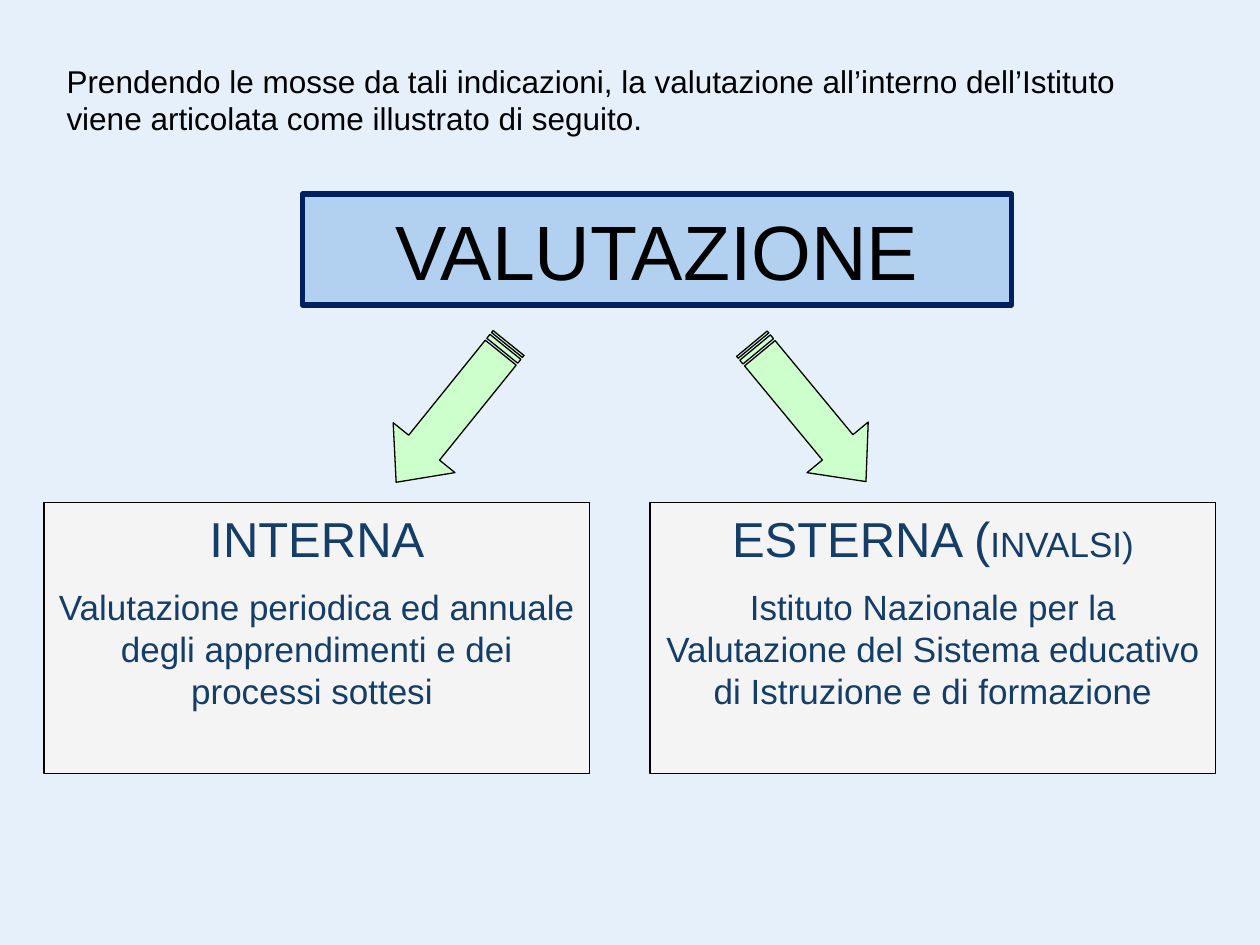
from dataclasses import dataclass

import pptx
import pptx.util
from pptx.dml.color import RGBColor
from pptx.enum.shapes import MSO_SHAPE
from pptx.enum.text import MSO_ANCHOR, PP_ALIGN

Inches, Pt = pptx.util.Inches, pptx.util.Pt


@dataclass(frozen=True)
class Theme:
    font: str = "Arial"
    background: str = "E5F0FA"
    black: str = "000000"
    text: str = "143D67"
    panel: str = "F4F4F4"
    banner: str = "B2D1F1"
    banner_line: str = "002060"
    arrow: str = "CCFFCC"
    banner_size: int = 44
    heading_size: int = 28
    body_size: int = 20
    intro_size: int = 18
    thin: float = 0.75
    thick: float = 3


THEME = Theme()


def add_box(slide, kind, box, fill, line, width):
    sp = slide.shapes.add_shape(kind, *map(Inches, box))
    sp.shadow.inherit = False
    sp.fill.solid()
    sp.fill.fore_color.rgb = RGBColor.from_string(fill)
    sp.line.color.rgb = RGBColor.from_string(line)
    sp.line.width = Pt(width)
    return sp


def add_runs(p, runs, color, align=PP_ALIGN.CENTER):
    """Fill a paragraph from (text, size) pairs."""
    p.alignment = align
    for text, size in runs:
        r = p.add_run()
        r.text = text
        r.font.name = THEME.font
        r.font.size = Pt(size)
        r.font.color.rgb = RGBColor.from_string(color)


def add_intro(slide, box, text):
    tf = slide.shapes.add_textbox(*map(Inches, box)).text_frame
    tf.word_wrap = True
    add_runs(tf.paragraphs[0], [(text, THEME.intro_size)], THEME.black, PP_ALIGN.LEFT)


def add_banner(slide, box, text):
    sp = add_box(slide, MSO_SHAPE.RECTANGLE, box, THEME.banner, THEME.banner_line, THEME.thick)
    tf = sp.text_frame
    tf.vertical_anchor = MSO_ANCHOR.MIDDLE
    add_runs(tf.paragraphs[0], [(text, THEME.banner_size)], THEME.black)


def add_panel(slide, box, heading, body):
    sp = add_box(slide, MSO_SHAPE.RECTANGLE, box, THEME.panel, THEME.black, THEME.thin)
    tf = sp.text_frame
    tf.word_wrap = True
    tf.vertical_anchor = MSO_ANCHOR.TOP
    add_runs(tf.paragraphs[0], heading, THEME.text)
    p = tf.add_paragraph()
    p.space_before = Pt(THEME.body_size / 2)
    add_runs(p, [(body, THEME.body_size)], THEME.text)


def add_arrow(slide, box, angle):
    sp = add_box(slide, MSO_SHAPE.STRIPED_RIGHT_ARROW, box, THEME.arrow, THEME.black, THEME.thin)
    sp.adjustments[0] = 0.5
    sp.adjustments[1] = 0.56
    sp.rotation = angle


def add_branches(slide, box, widths, branches):
    """Place panels at both ends of the box, each with an arrow above it."""
    left, top, width, height = box
    arrow_w, arrow_h, arrow_top = 1.42, 0.63, top - 1.03
    lefts = (left, left + width - widths[1])
    for x, w, (heading, body, arrow_left, angle) in zip(lefts, widths, branches):
        add_panel(slide, (x, top, w, height), heading, body)
        add_arrow(slide, (x + arrow_left, arrow_top, arrow_w, arrow_h), angle)


def main():
    prs = pptx.Presentation()
    prs.slide_width, prs.slide_height = Inches(10), Inches(7.5)
    slide = prs.slides.add_slide(prs.slide_layouts[6])
    slide.background.fill.solid()
    slide.background.fill.fore_color.rgb = RGBColor.from_string(THEME.background)

    branches = [
        ([("INTERNA", THEME.heading_size)],
         "Valutazione periodica ed annuale degli apprendimenti e dei processi sottesi ",
         2.53, 128.9),
        ([("ESTERNA (", THEME.heading_size), ("INVALSI)", THEME.body_size)],
         "Istituto Nazionale per la Valutazione del Sistema educativo "
         "di Istruzione e di formazione",
         0.55, 50.4),
    ]
    add_branches(slide, (0.35, 3.99, 9.3, 2.15), (4.33, 4.49), branches)
    add_banner(slide, (2.4, 1.54, 5.63, 0.88), "VALUTAZIONE")
    add_intro(slide, (0.43, 0.44, 9.06, 0.7),
              "Prendendo le mosse da tali indicazioni, la valutazione all’interno "
              "dell’Istituto viene articolata come illustrato di seguito.")
    prs.save("out.pptx")


if __name__ == "__main__":
    main()
